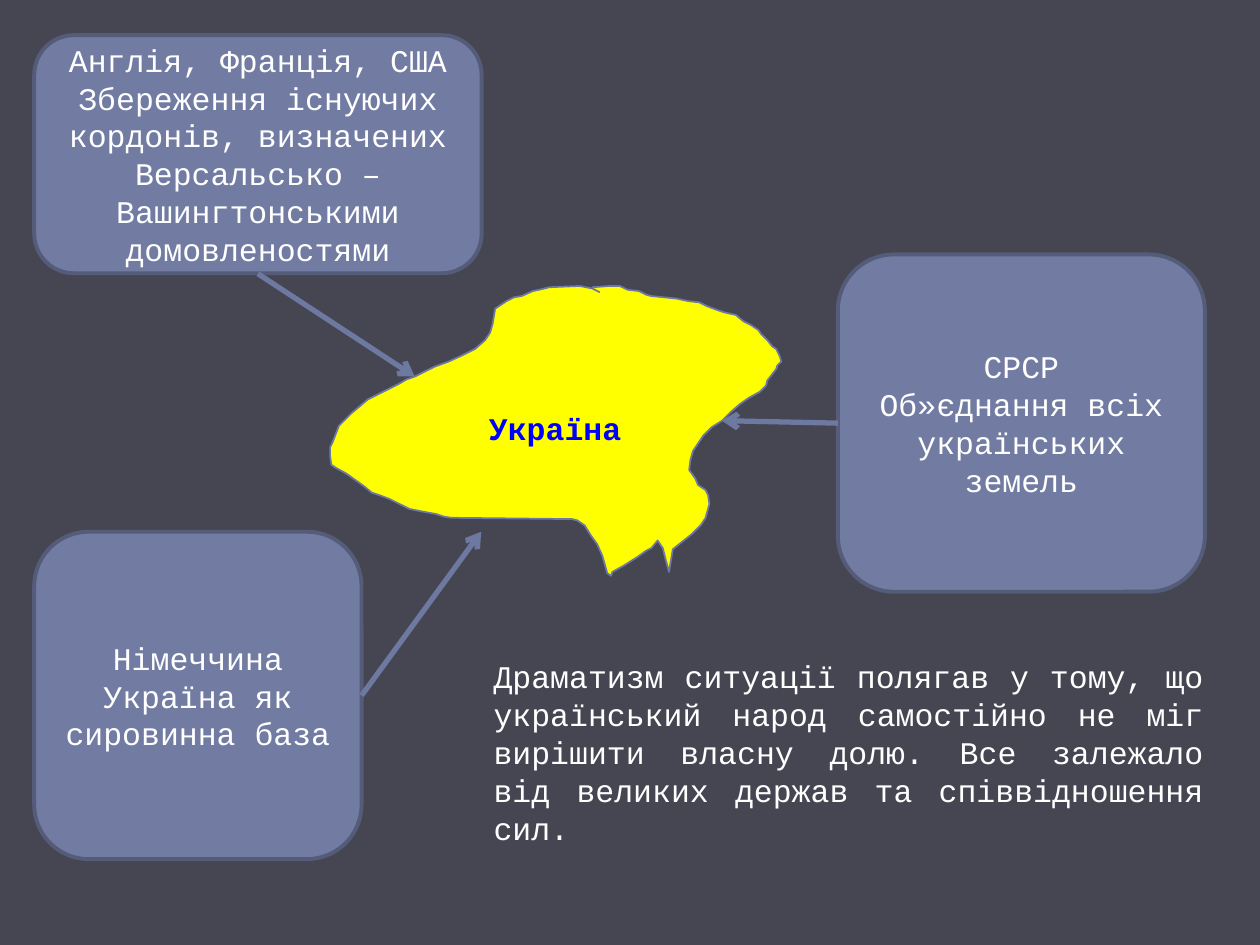
from lxml import etree
from pptx import Presentation
from pptx import util as u
from pptx.dml.color import RGBColor
from pptx.enum import shapes, text
from pptx.oxml.ns import qn

COLORS = {
    "background": "464653",
    "box": "727CA3",
    "border": "545C79",
    "arrow": "6E79A1",
    "map": "FFFF00",
    "label": "0000FF",
    "text": "FFFFFF",
}

# Outline of the country, in hundredths of an inch
OUTLINE_UNIT = u.Cm(0.0254)
OUTLINE = [
    (476, 232), (470, 229), (460, 227), (436, 228), (428, 230), (423, 231),
    (414, 235), (408, 236), (402, 239), (396, 243), (393, 245), (391, 257),
    (389, 264), (385, 270), (377, 277), (367, 282), (356, 287), (345, 291),
    (337, 295), (329, 299), (323, 301), (316, 305), (308, 309), (300, 313),
    (292, 317), (279, 328), (269, 338), (264, 351), (262, 355), (262, 362),
    (263, 369), (266, 371), (275, 376), (289, 386), (295, 391), (301, 393),
    (309, 396), (325, 404), (335, 406), (346, 408), (352, 410), (358, 411),
    (454, 412), (458, 413), (464, 417), (469, 425), (474, 432), (478, 441),
    (480, 448), (482, 455), (485, 457), (486, 454), (495, 449), (506, 442),
    (513, 437), (517, 435), (522, 429), (526, 435), (528, 443), (531, 454),
    (534, 436), (549, 424), (556, 417), (560, 411), (563, 400), (562, 393),
    (560, 389), (554, 385), (552, 380), (547, 373), (548, 365), (550, 358),
    (558, 346), (565, 339), (573, 334), (580, 327), (587, 321), (594, 316),
    (603, 311), (608, 306), (609, 302), (616, 293), (617, 290), (620, 287),
    (619, 283), (616, 277), (613, 275), (609, 270), (604, 265), (602, 262),
    (596, 258), (590, 255), (584, 250), (575, 248), (569, 246), (561, 243),
    (555, 240), (546, 239), (537, 237), (517, 235), (513, 234), (507, 231),
    (498, 230), (492, 227), (484, 227), (470, 228),
]


def rgb(name):
    return RGBColor.from_string(COLORS[name])


class Deck:
    font = "Courier New"
    size = u.Pt(18)

    def __init__(self, prs):
        self.s = prs.slides.add_slide(prs.slide_layouts[6])
        self.s.background.fill.solid()
        self.s.background.fill.fore_color.rgb = rgb("background")

    def set_text(self, tf, lines, color, align, bold=False):
        tf.word_wrap = True
        for i, line in enumerate(lines):
            p = tf.add_paragraph() if i else tf.paragraphs[0]
            p.text = line
            p.alignment = align
            p.font.name, p.font.size, p.font.bold = self.font, self.size, bold
            p.font.color.rgb = rgb(color)

    def paint(self, sp, fill, line, width):
        sp.shadow.inherit = False
        sp.fill.solid()
        sp.fill.fore_color.rgb = rgb(fill)
        sp.line.color.rgb = rgb(line)
        sp.line.width = u.Pt(width)

    def outline(self, points):
        fb = self.s.shapes.build_freeform(*points[0], scale=OUTLINE_UNIT)
        fb.add_line_segments(points[1:], close=False)
        self.paint(fb.convert_to_shape(), "map", "arrow", 1)

    def box(self, x, y, w, h, *lines):
        sp = self.s.shapes.add_shape(
            shapes.MSO_SHAPE.ROUNDED_RECTANGLE, *map(u.Cm, (x, y, w, h)))
        self.paint(sp, "box", "border", 2.25)
        sp.text_frame.vertical_anchor = text.MSO_ANCHOR.MIDDLE
        self.set_text(sp.text_frame, lines, "text", text.PP_ALIGN.CENTER)

    def label(self, x, y, w, h, line, color, align, bold=False):
        tf = self.s.shapes.add_textbox(*map(u.Cm, (x, y, w, h))).text_frame
        self.set_text(tf, [line], color, align, bold)
        tf.auto_size = text.MSO_AUTO_SIZE.SHAPE_TO_FIT_TEXT

    def arrow(self, x1, y1, x2, y2):
        c = self.s.shapes.add_connector(
            shapes.MSO_CONNECTOR.STRAIGHT, *map(u.Cm, (x1, y1, x2, y2)))
        c.line.color.rgb = rgb("arrow")
        c.line.width = u.Pt(3)
        sp_pr = c._element.spPr
        etree.SubElement(sp_pr.find(qn("a:ln")), qn("a:tailEnd"), type="arrow")
        etree.SubElement(sp_pr, qn("a:effectLst"))


def main():
    prs = Presentation()
    prs.slide_width, prs.slide_height = u.Cm(25.4), u.Cm(19.05)
    d = Deck(prs)

    # Country in the centre
    d.outline(OUTLINE)
    d.label(8.89, 8.13, 4.6, 1.02, "Україна", "label",
            text.PP_ALIGN.CENTER, bold=True)

    # Powers and their aims, each pointing at the country
    d.box(0.69, 0.71, 9.02, 4.8, "Англія, Франція, США",
          "Збереження існуючих кордонів, визначених "
          "Версальсько – Вашингтонськими домовленостями")
    d.arrow(5.2, 5.52, 8.36, 7.59)
    d.box(0.69, 10.72, 6.6, 6.6, "Німеччина", "Україна як сировинна база")
    d.arrow(7.29, 14.02, 9.7, 10.72)
    d.box(16.89, 5.13, 7.4, 6.8, "СРСР", "Об»єднання всіх українських земель")
    d.arrow(16.89, 8.53, 14.55, 8.48)

    # Conclusion
    d.label(9.7, 13.13, 14.81, 4.11,
            "Драматизм ситуації полягав у тому, що український народ "
            "самостійно не міг вирішити власну долю. Все залежало від "
            "великих держав та співвідношення сил.",
            "text", text.PP_ALIGN.JUSTIFY)

    prs.save("out.pptx")


if __name__ == "__main__":
    main()
